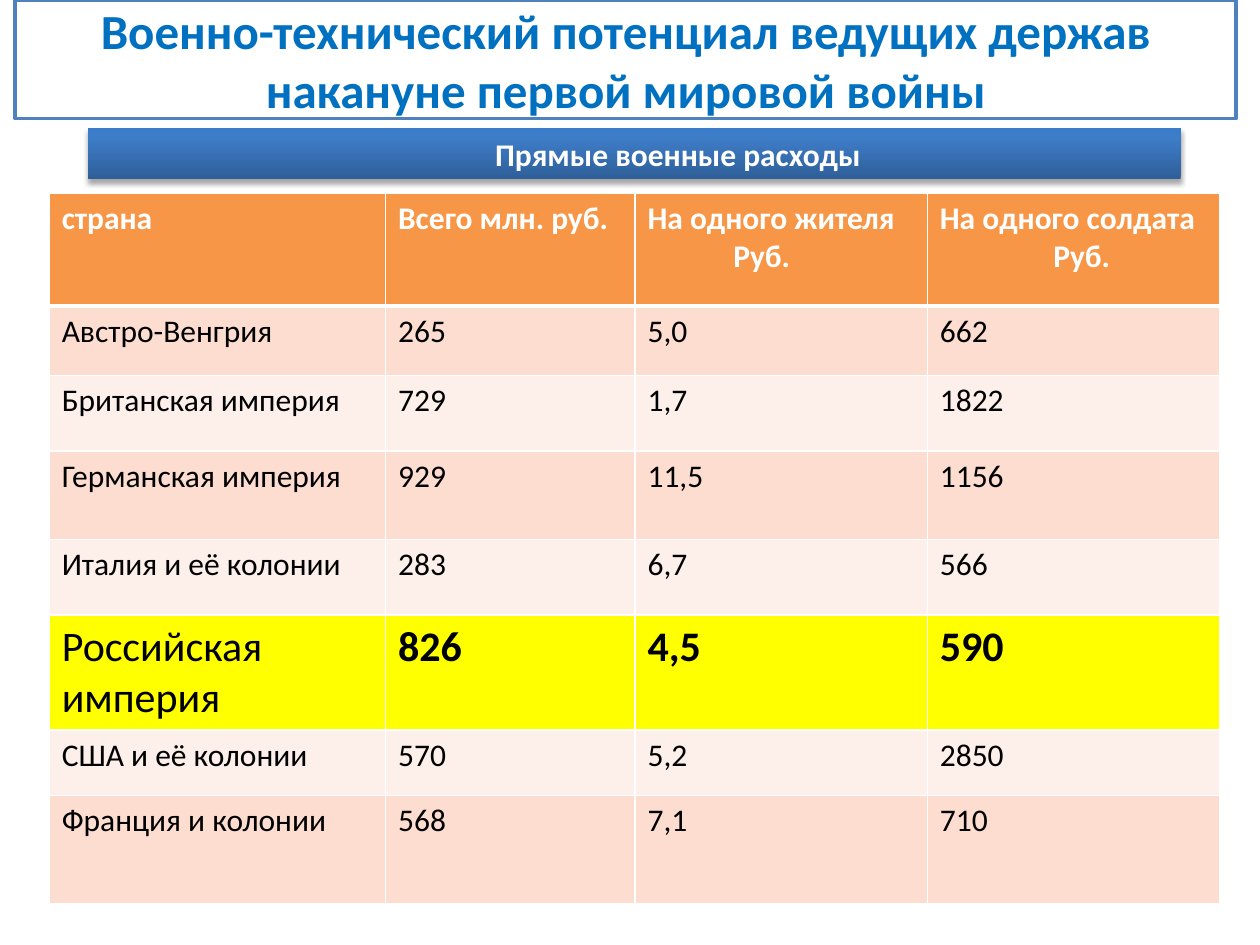
from lxml.etree import SubElement
from pptx import Presentation
from pptx.dml.color import RGBColor
from pptx.enum.shapes import MSO_SHAPE
from pptx.enum.text import MSO_ANCHOR, MSO_AUTO_SIZE, PP_ALIGN
from pptx.oxml.ns import qn
from pptx.util import Inches, Pt

COLORS = {
    "white": "FFFFFF", "black": "000000", "title": "0070C0", "frame": "4F81BD",
    "header": "F79646", "odd": "FCDDCF", "even": "FDEFE9", "highlight": "FFFF00",
}
BANNER_STOPS = [(0, "2F5F99"), (80, "3D7CC7"), (100, "3A7CCB")]
COLUMN_WIDTHS = [2.67, 1.98, 2.32, 2.32]
ROW_HEIGHTS = [0.9, 0.55, 0.6, 0.7, 0.6, 0.6, 0.52, 0.86]
UNIT_INDENTS = {2: 0.68, 3: 0.9}
HIGHLIGHT_ROW = 5
SPENDING = [
    ["страна", "Всего млн. руб.", "На одного жителя\nРуб.", "На одного солдата\nРуб."],
    ["Австро-Венгрия", "265", "5,0", "662"],
    ["Британская империя", "729", "1,7", "1822"],
    ["Германская империя", "929", "11,5", "1156"],
    ["Италия и её колонии", "283", "6,7", "566"],
    ["Российская империя", "826", "4,5", "590"],
    ["США и её колонии", "570", "5,2", "2850"],
    ["Франция и колонии", "568", "7,1", "710"],
]


def color(name):
    return RGBColor.from_string(COLORS[name])


def format_text(frame, size, color_name, bold, align=PP_ALIGN.LEFT):
    for para in frame.paragraphs:
        para.alignment = align
        for span in para.runs:
            span.font.name = "Calibri"
            span.font.size = Pt(size)
            span.font.bold = bold
            span.font.color.rgb = color(color_name)


def add_title(page, text):
    title = page.shapes.title
    title.left, title.top = Inches(0.12), 0
    title.width, title.height = Inches(9.69), Inches(0.94)
    title.fill.solid()
    title.fill.fore_color.rgb = color("white")
    title.line.color.rgb = color("frame")
    title.line.width = Pt(2)
    frame = title.text_frame
    frame.text = text
    frame.auto_size = MSO_AUTO_SIZE.NONE
    frame.vertical_anchor = MSO_ANCHOR.MIDDLE
    format_text(frame, 28, "title", True, PP_ALIGN.CENTER)


def add_color(parent, value):
    return SubElement(parent, qn("a:srgbClr"), val=value)


def add_banner(page, text):
    banner = page.shapes.add_shape(
        MSO_SHAPE.RECTANGLE, Inches(0.7), Inches(1.02), Inches(8.67), Inches(0.4))
    banner.line.fill.background()
    banner.fill.gradient()
    banner.fill.gradient_angle = 90
    stops = banner.element.spPr.find(".//" + qn("a:gsLst"))
    stops.clear()
    for share, value in BANNER_STOPS:
        add_color(SubElement(stops, qn("a:gs"), pos=str(share * 1000)), value)
    banner.shadow.inherit = False
    shadow = SubElement(
        banner.element.spPr.find(qn("a:effectLst")), qn("a:outerShdw"),
        blurRad=str(Pt(3.1)), dist=str(Pt(1.8)), dir="5400000", rotWithShape="0")
    SubElement(add_color(shadow, COLORS["black"]), qn("a:alpha"), val="35000")
    frame = banner.text_frame
    frame.text = text
    frame.word_wrap = True
    frame.margin_left = Inches(3.23)
    frame.vertical_anchor = MSO_ANCHOR.TOP
    format_text(frame, 18, "white", True)


def set_borders(cell, bottom):
    """White cell edges of 1 pt, with the given width below."""
    properties = cell._tc.get_or_add_tcPr()
    for position, (side, width) in enumerate(
            [("lnL", 1), ("lnR", 1), ("lnT", 1), ("lnB", bottom)]):
        edge = properties.makeelement(qn("a:" + side), {"w": str(Pt(width))})
        properties.insert(position, edge)
        add_color(SubElement(edge, qn("a:solidFill")), COLORS["white"])


def row_style(row):
    """Fill, text size and text colour of a table row."""
    if row == 0:
        return "header", 18, "white"
    if row == HIGHLIGHT_ROW:
        return "highlight", 24, "black"
    return ("odd" if row % 2 else "even"), 18, "black"


def add_spending_table(page):
    table = page.shapes.add_table(
        len(SPENDING), len(COLUMN_WIDTHS), Inches(0.39), Inches(1.53),
        Inches(sum(COLUMN_WIDTHS)), Inches(sum(ROW_HEIGHTS))).table
    for column, width in zip(table.columns, COLUMN_WIDTHS):
        column.width = Inches(width)
    for row, values in enumerate(SPENDING):
        table.rows[row].height = Inches(ROW_HEIGHTS[row])
        fill, size, ink = row_style(row)
        for column, value in enumerate(values):
            cell = table.cell(row, column)
            cell.text_frame.text = value
            bold = row == 0 or (row == HIGHLIGHT_ROW and column > 0)
            format_text(cell.text_frame, size, ink, bold)
            cell.fill.solid()
            cell.fill.fore_color.rgb = color(fill)
            set_borders(cell, 3 if row == 0 else 1)
    for column, indent in UNIT_INDENTS.items():
        unit = table.cell(0, column).text_frame.paragraphs[1]
        unit._p.get_or_add_pPr().set("marL", str(Inches(indent)))


def main():
    deck = Presentation()
    deck.slide_width, deck.slide_height = Inches(10), Inches(7.5)
    page = deck.slides.add_slide(deck.slide_layouts[0])
    subtitle = page.placeholders[1].element
    subtitle.getparent().remove(subtitle)
    add_title(page, "Военно-технический потенциал ведущих держав накануне первой мировой войны")
    add_spending_table(page)
    add_banner(page, "Прямые военные расходы")
    deck.save("out.pptx")


if __name__ == "__main__":
    main()
